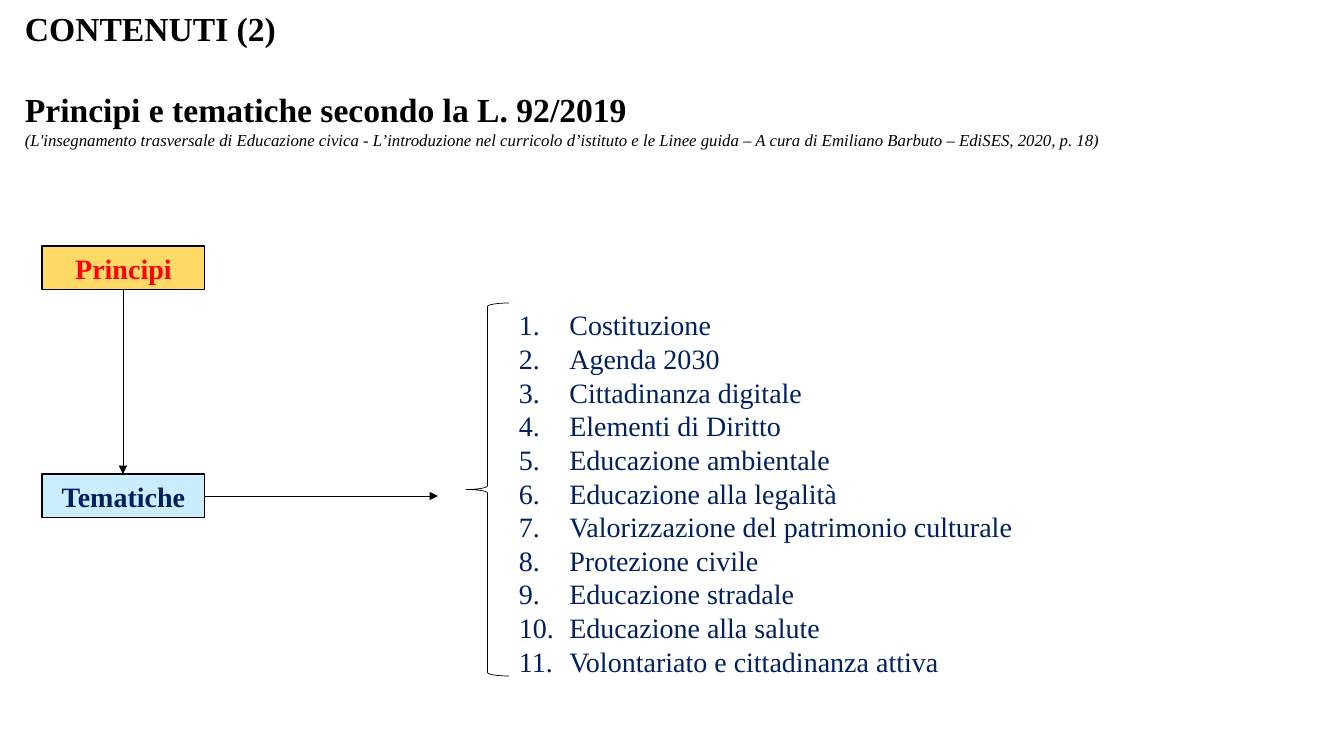
import pptx
import pptx.dml.color
import pptx.enum.shapes
import pptx.enum.text
import pptx.oxml.ns
import pptx.util
from lxml import etree

RGB = pptx.dml.color.RGBColor
SHAPE = pptx.enum.shapes.MSO_SHAPE
ALIGN = pptx.enum.text.PP_ALIGN
ANCHOR = pptx.enum.text.MSO_ANCHOR
Pt = pptx.util.Pt

BLACK = RGB(0x00, 0x00, 0x00)
NAVY = RGB(0x00, 0x20, 0x60)
RED = RGB(0xFF, 0x00, 0x00)
GOLD = RGB(0xFF, 0xD9, 0x66)
SKY = RGB(0xCC, 0xEC, 0xFF)
FONT = "Times New Roman"
SCALE = 914400 / 100.8

TOPICS = [
    "Costituzione",
    "Agenda 2030",
    "Cittadinanza digitale",
    "Elementi di Diritto",
    "Educazione ambientale",
    "Educazione alla legalità",
    "Valorizzazione del patrimonio culturale",
    "Protezione civile",
    "Educazione stradale",
    "Educazione alla salute",
    "Volontariato e cittadinanza attiva",
]
SOURCE = (
    "(L'insegnamento trasversale di Educazione civica - L’introduzione nel "
    "curricolo d’istituto e le Linee guida – A cura di Emiliano Barbuto – "
    "EdiSES, 2020, p. 18)"
)


def px(*sizes):
    return [round(size * SCALE) for size in sizes]


def add_node(parent, tag, **attrs):
    return etree.SubElement(parent, pptx.oxml.ns.qn(tag), **attrs)


def add_text(frame, text, size=20, color=BLACK, bold=False, italic=False,
             align=ALIGN.LEFT, before=0, pitch=None, number=False):
    para = frame.paragraphs[0]
    if para.runs:
        para = frame.add_paragraph()
    para.alignment = align
    if before:
        para.space_before = Pt(before)
    if pitch:
        para.line_spacing = Pt(pitch)
    if number:
        props = para._p.get_or_add_pPr()
        props.set("marL", "457200")
        props.set("indent", "-457200")
        add_node(props, "a:buFont", typeface=FONT)
        add_node(props, "a:buAutoNum", type="arabicPeriod")
    run = para.add_run()
    run.text = text
    font = run.font
    font.name, font.size = FONT, Pt(size)
    font.bold, font.italic = bold, italic
    font.color.rgb = color


def add_frame(slide, box):
    frame = slide.shapes.add_textbox(*px(*box)).text_frame
    frame.word_wrap = True
    return frame


def add_shape(slide, kind, box, width, fill=None):
    shape = slide.shapes.add_shape(kind, *px(*box))
    shape.shadow.inherit = False
    if fill is None:
        shape.fill.background()
    else:
        shape.fill.solid()
        shape.fill.fore_color.rgb = fill
    shape.line.color.rgb = BLACK
    shape.line.width = Pt(width)
    return shape


def add_arrow(slide, start, end):
    kind = pptx.enum.shapes.MSO_CONNECTOR.STRAIGHT
    arrow = slide.shapes.add_connector(kind, *px(*start, *end))
    arrow.line.color.rgb = BLACK
    arrow.line.width = Pt(0.5)
    add_node(arrow.line._get_or_add_ln(), "a:tailEnd", type="triangle")
    add_node(arrow._element.spPr, "a:effectLst")


def add_head(slide, box):
    frame = add_frame(slide, box)
    frame.margin_top = px(8)[0]
    style = dict(align=ALIGN.JUSTIFY)
    add_text(frame, "CONTENUTI (2)", size=24, bold=True, **style)
    add_text(frame, "Principi e tematiche secondo la L. 92/2019",
             size=24, bold=True, before=29, **style)
    add_text(frame, SOURCE, size=12, italic=True, **style)


def add_flow(slide, box):
    left, top, width, height = box
    wide, high = 163, 44
    low = top + height - high
    cards = [("Principi", top, GOLD, RED), ("Tematiche", low, SKY, NAVY)]
    for name, y, fill, color in cards:
        card = add_shape(slide, SHAPE.RECTANGLE, (left, y, wide, high), 0.75, fill)
        frame = card.text_frame
        frame.vertical_anchor = ANCHOR.MIDDLE
        add_text(frame, name, color=color, bold=True, align=ALIGN.CENTER)
    mid = left + wide // 2
    add_arrow(slide, (mid, top + high), (mid, low))
    axis = low + high // 2
    add_arrow(slide, (left + wide, axis), (left + width, axis))


def add_list(slide, box):
    left, top, width, height = box
    brace = 43
    add_shape(slide, SHAPE.LEFT_BRACE, (left, top, brace, height - 10), 0.5)
    frame = add_frame(slide, (left + brace, top, width - brace, height))
    for topic in TOPICS:
        add_text(frame, topic, color=NAVY, pitch=24, number=True)


def main():
    deck = pptx.Presentation()
    deck.slide_width, deck.slide_height = px(1344, 756)
    slide = deck.slides.add_slide(deck.slide_layouts[6])
    add_head(slide, (15, 0, 1329, 234))
    add_flow(slide, (42, 246, 396, 272))
    add_list(slide, (466, 303, 823, 383))
    deck.save("out.pptx")


if __name__ == "__main__":
    main()
